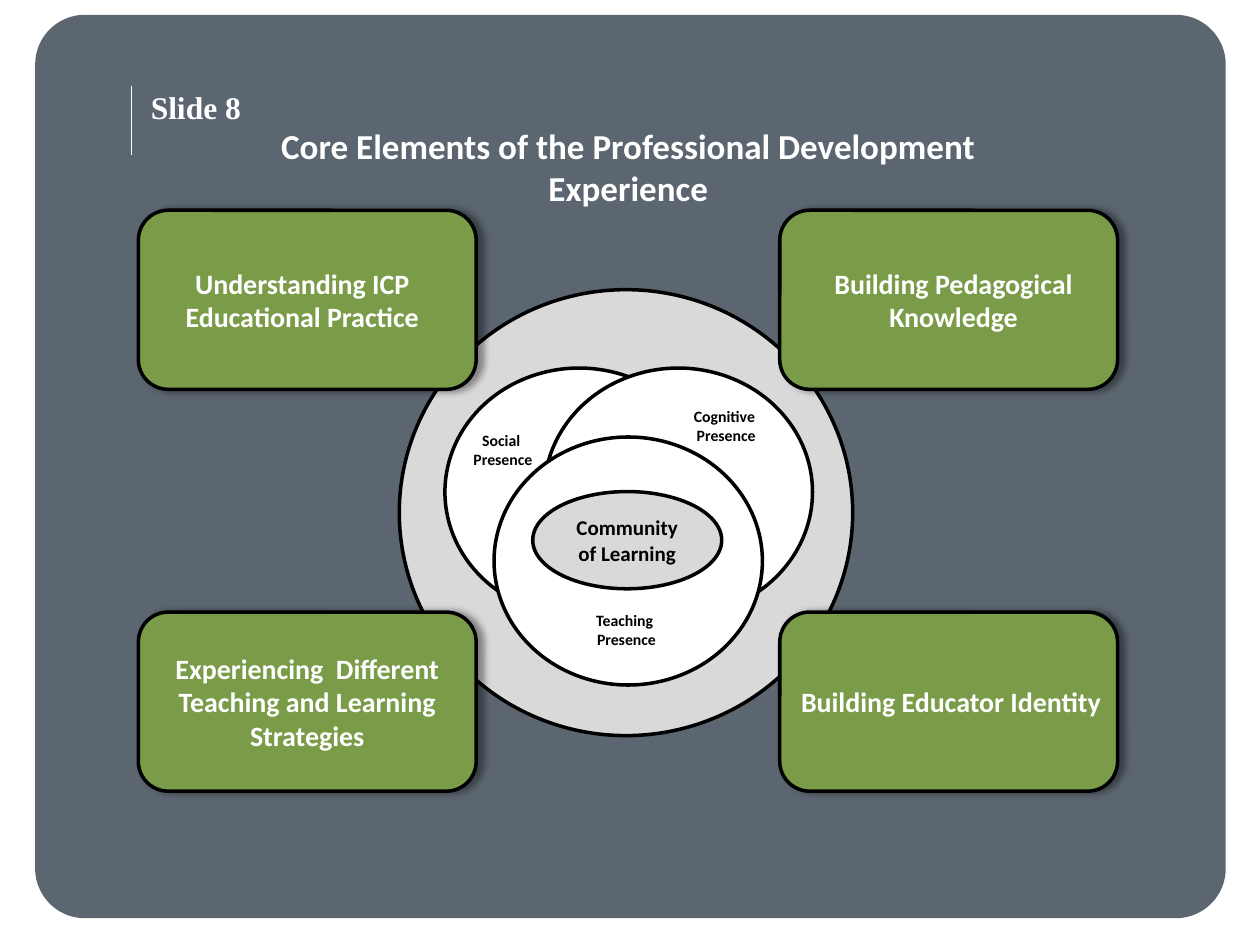
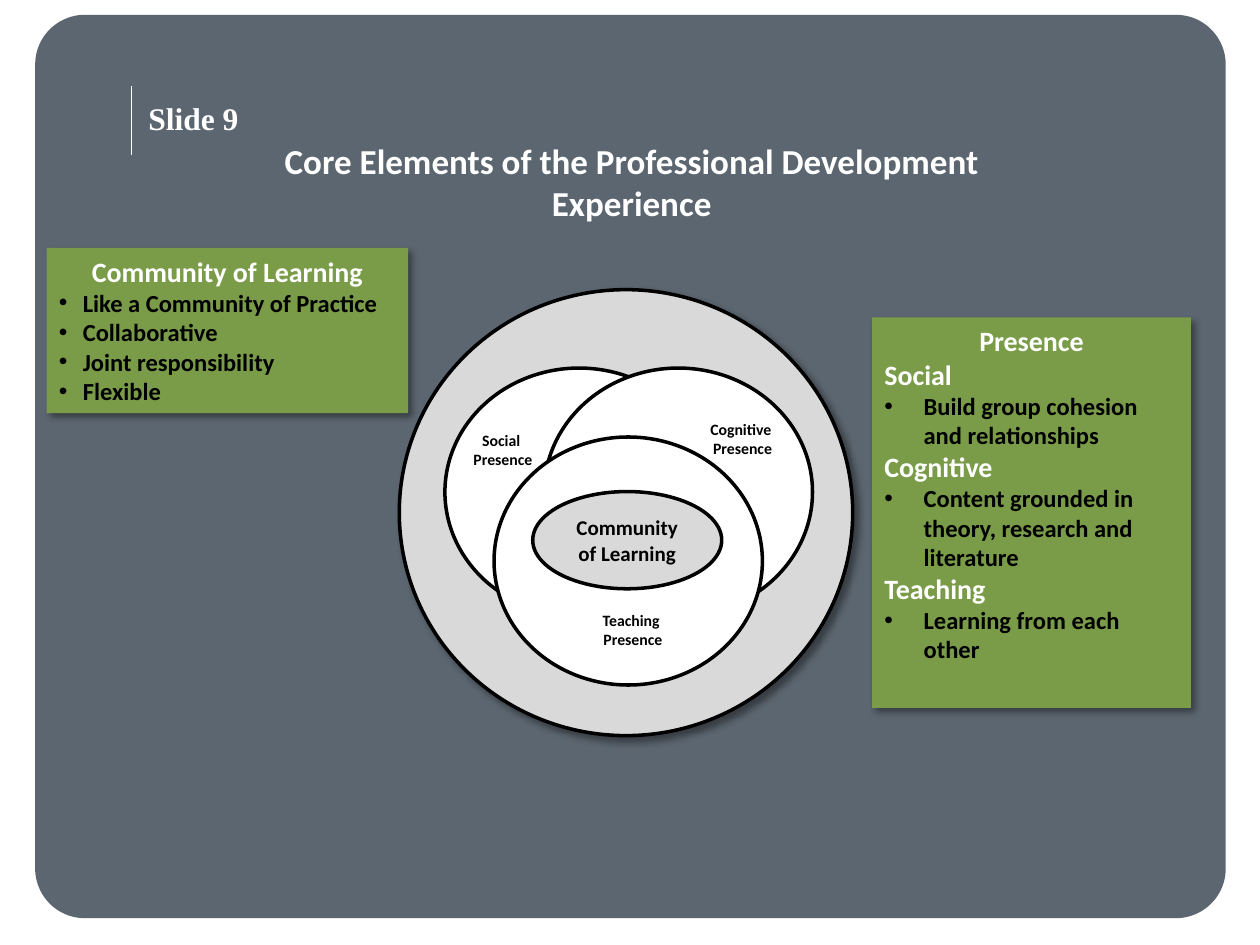
from lxml import etree
from pptx import Presentation
from pptx.dml.color import RGBColor
from pptx.enum import shapes, text
from pptx.oxml import ns
from pptx.util import Cm, Pt

SLATE, GREEN, GREY = "5C6670", "7A9C49", "D9D9D9"
WHITE, BLACK = "FFFFFF", "000000"
BODY_FONT, TAG_FONT = "Calibri", "Times New Roman"
HEADING = "Core Elements of the Professional Development Experience"
CENTER, LEFT = text.PP_ALIGN.CENTER, text.PP_ALIGN.LEFT
TOP, MIDDLE = text.MSO_ANCHOR.TOP, text.MSO_ANCHOR.MIDDLE
OVAL, RECT, ROUNDED = (shapes.MSO_SHAPE.OVAL, shapes.MSO_SHAPE.RECTANGLE,
                       shapes.MSO_SHAPE.ROUNDED_RECTANGLE)


def color(hex_code):
    return RGBColor.from_string(hex_code)


def lengths(*values):
    return [Cm(value) for value in values]


# Shared drawing helpers
def add_span(para, words, size, ink, font=BODY_FONT):
    span = para.add_run()
    span.text = words
    span.font.name, span.font.size, span.font.bold = font, Pt(size), True
    span.font.color.rgb = color(ink)


def write_lines(frame, lines, size, ink, font=BODY_FONT, align=CENTER, anchor=TOP):
    frame.word_wrap = True
    frame.vertical_anchor = anchor
    for number, words in enumerate(lines):
        para = frame.add_paragraph() if number else frame.paragraphs[0]
        para.alignment = align
        add_span(para, words, size, ink, font)


def add_text(page, box, lines, size, ink, **style):
    label = page.shapes.add_textbox(*lengths(*box))
    write_lines(label.text_frame, lines, size, ink, **style)


def add_figure(page, kind, box, fill, outlined=True):
    figure = page.shapes.add_shape(kind, *lengths(*box))
    figure.shadow.inherit = False
    figure.fill.solid()
    figure.fill.fore_color.rgb = color(fill)
    if outlined:
        figure.line.color.rgb = color(BLACK)
        figure.line.width = Pt(2)
    else:
        figure.line.fill.background()
    return figure


def add_shadow(figure, degrees):
    effects = figure.element.spPr.find(ns.qn("a:effectLst"))
    outer = etree.SubElement(effects, ns.qn("a:outerShdw"), blurRad=str(Pt(4)),
                             dist=str(Pt(3)), dir=str(degrees * 60000),
                             algn="tl", rotWithShape="0")
    ink = etree.SubElement(outer, ns.qn("a:srgbClr"), val=BLACK)
    etree.SubElement(ink, ns.qn("a:alpha"), val="40000")


def add_bullet(para, indent):
    props = para._p.get_or_add_pPr()
    props.set("marL", str(Cm(indent)))
    props.set("indent", str(-Cm(indent)))
    etree.SubElement(props, ns.qn("a:buFont"), typeface="Arial")
    etree.SubElement(props, ns.qn("a:buChar"), char="•")


# Backdrop, heading and slide tag
def start_page(deck, title_at, tag, tag_at):
    page = deck.slides.add_slide(deck.slide_layouts[5])
    backdrop = add_figure(page, ROUNDED, (0.71, 0.3, 24, 18.21), SLATE, outlined=False)
    backdrop.adjustments[0] = 0.055

    rule = page.shapes.add_connector(shapes.MSO_CONNECTOR.STRAIGHT,
                                     *lengths(2.64, 1.73, 2.64, 3.12))
    rule.line.color.rgb = color(WHITE)
    rule.line.width = Pt(0.25)
    etree.SubElement(rule.element.spPr, ns.qn("a:effectLst"))

    title = page.shapes.title
    title.element.getparent().append(title.element)
    title.left, title.top, title.width, title.height = lengths(*title_at, 17.35, 1.4)
    title.text_frame.auto_size = text.MSO_AUTO_SIZE.NONE
    write_lines(title.text_frame, [HEADING], 20, WHITE)
    add_text(page, (*tag_at, 4.01, 1.02), [tag], 18, WHITE, font=TAG_FONT, align=LEFT)
    return page


# Overlapping presences inside the large circle
def add_presence_diagram(page, box, cognitive_at, teaching_at, shaded=False):
    left, top, width, height = box
    circle = add_figure(page, OVAL, box, GREY)
    if shaded:
        add_shadow(circle, 45)
    for x, y in ((0.92, 1.58), (2.92, 1.58), (1.91, 2.97)):
        add_figure(page, OVAL, (left + x, top + y, 5.41, 5), WHITE)
    labels = {"Social ": (1.09, 2.72), "Cognitive ": cognitive_at,
              "Teaching ": teaching_at}
    for name, (x, y) in labels.items():
        add_text(page, (left + x, top + y, 2, 1.02), [name, "Presence"], 9, BLACK)
    core = add_figure(page, OVAL, (left + 2.69, top + 4.07, 3.81, 1.96), GREY)
    write_lines(core.text_frame, ["Community of Learning"], 12, BLACK, anchor=MIDDLE)


# Four cards on the corners of a box
def add_corner_cards(page, box, cards):
    left, top, width, height = box
    card_width, card_height = 6.81, 3.61
    for number, (words, shift) in enumerate(cards):
        row, column = divmod(number, 2)
        card = add_figure(page, ROUNDED, (left + column * (width - card_width),
                                          top + row * (height - card_height),
                                          card_width, card_height), GREEN)
        add_shadow(card, 0)
        frame = card.text_frame
        frame.margin_left, frame.margin_right = lengths(0.1 + shift, 0.1 - shift)
        write_lines(frame, [words], 16, WHITE, anchor=MIDDLE)


# Green panel with a centred heading, subheadings and bullets
def add_panel(page, box, heading, sections, indent):
    panel = add_figure(page, RECT, box, GREEN, outlined=False)
    add_shadow(panel, 45)
    frame = panel.text_frame
    write_lines(frame, [heading], 16, WHITE)
    for subheading, points in sections:
        if subheading:
            para = frame.add_paragraph()
            para.alignment = LEFT
            add_span(para, subheading, 16, WHITE)
        for point in points:
            para = frame.add_paragraph()
            para.alignment = LEFT
            add_bullet(para, indent)
            add_span(para, point, 14, BLACK)


def main():
    deck = Presentation()
    deck.slide_width, deck.slide_height = lengths(25.4, 19.05)
    diagram_box = (8.05, 5.84, 9.14, 8.99)

    # Core elements
    page = start_page(deck, (3.99, 2.39), "Slide 8", (2.79, 1.65))
    add_presence_diagram(page, diagram_box, (5.59, 2.24), (3.58, 6.35))
    add_corner_cards(page, (2.79, 4.24, 19.74, 11.71), [
        ("Understanding ICP Educational Practice", -0.1),
        ("Building Pedagogical Knowledge", 0.1),
        ("Experiencing  Different Teaching and Learning Strategies", 0),
        ("Building Educator Identity", 0.05),
    ])

    # Community and presence explained
    page = start_page(deck, (4.06, 2.69), "Slide 9", (2.74, 1.88))
    add_presence_diagram(page, diagram_box, (5.92, 2.49), (3.71, 6.35), shaded=True)
    add_panel(page, (0.94, 5, 7.29, 3.33), "Community of Learning", [
        (None, ["Like a Community of Practice", "Collaborative",
                "Joint responsibility", "Flexible"]),
    ], 0.48)
    add_panel(page, (17.58, 6.4, 6.43, 7.87), "Presence", [
        ("Social", ["Build group cohesion and relationships"]),
        ("Cognitive", ["Content grounded in theory, research and literature"]),
        ("Teaching", ["Learning from each other"]),
    ], 0.79)

    deck.save("out.pptx")


if __name__ == "__main__":
    main()
